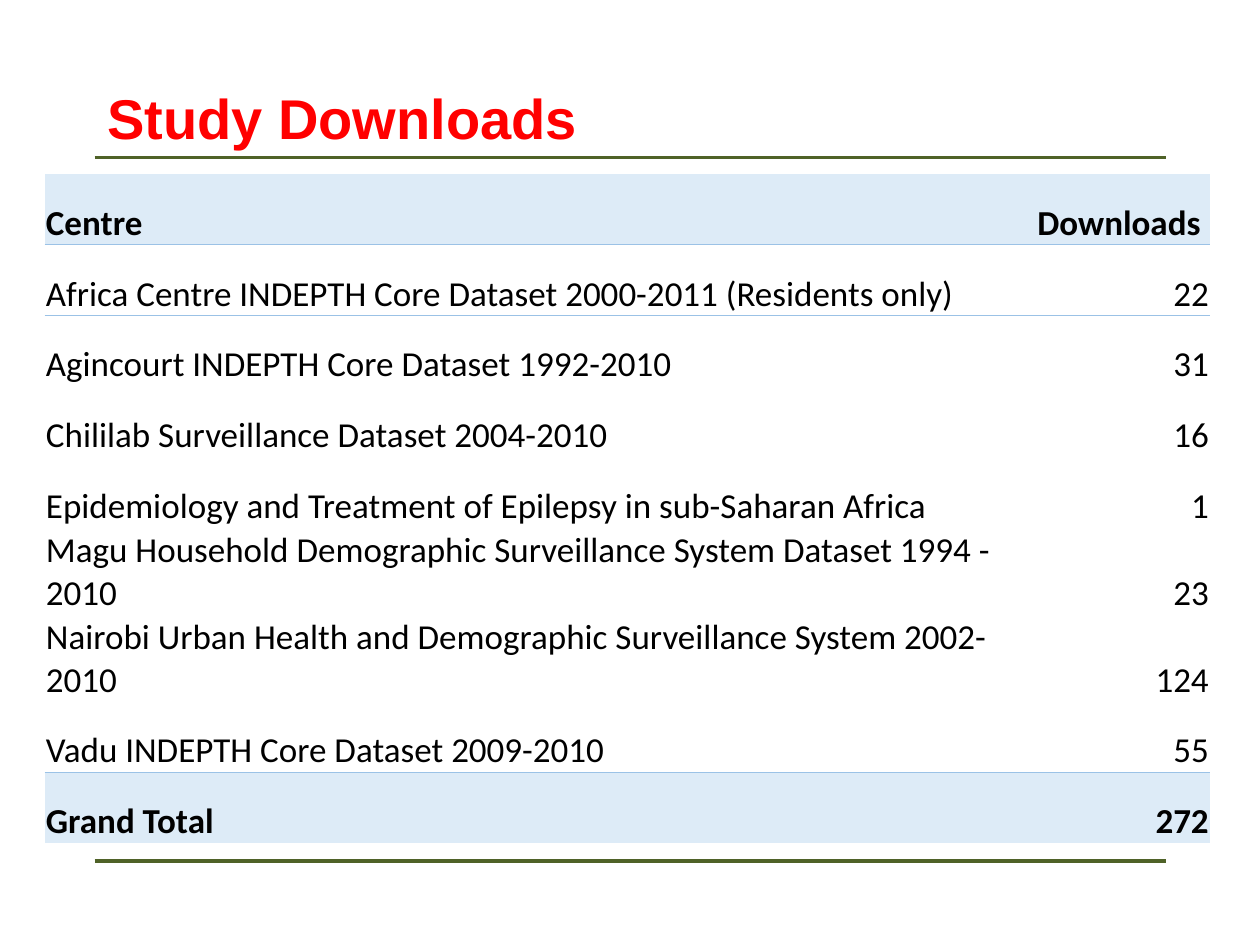
import pptx
import pptx.dml.color
import pptx.enum.dml
import pptx.enum.shapes
import pptx.enum.text
import pptx.oxml
import pptx.oxml.ns
import pptx.util

Pt = pptx.util.Pt
RGBColor = pptx.dml.color.RGBColor
ALIGN = pptx.enum.text.PP_ALIGN
ANCHOR = pptx.enum.text.MSO_ANCHOR

TITLE_RED = RGBColor(0xFF, 0x00, 0x00)
RULE_GREEN = RGBColor(0x4F, 0x62, 0x28)
BAND_BLUE = RGBColor(0xDD, 0xEB, 0xF7)
BORDER_BLUE = RGBColor(0x9B, 0xC2, 0xE6)
BLACK = RGBColor(0x00, 0x00, 0x00)
NO_STYLE = "{2D5ABB26-0587-4C30-8999-92F81FD0307C}"

DOWNLOADS = [
    ("Centre", "Downloads"),
    ("Africa Centre INDEPTH Core Dataset 2000-2011 (Residents only)", "22"),
    ("Agincourt INDEPTH Core Dataset 1992-2010", "31"),
    ("Chililab Surveillance Dataset 2004-2010", "16"),
    ("Epidemiology and Treatment of Epilepsy in sub-Saharan Africa", "1"),
    ("Magu Household Demographic Surveillance System Dataset 1994 - 2010", "23"),
    ("Nairobi Urban Health and Demographic Surveillance System 2002-2010", "124"),
    ("Vadu INDEPTH Core Dataset 2009-2010", "55"),
    ("Grand Total", "272"),
]


def add_rule(slide, left, top, width):
    """Draw a green horizontal rule."""
    rule = slide.shapes.add_connector(
        pptx.enum.shapes.MSO_CONNECTOR.STRAIGHT, left, top, left + width, top)
    rule.line.color.rgb = RULE_GREEN
    rule.line.width = Pt(2.25)
    pptx.oxml.ns.qn("a:effectLst")
    rule._element.spPr.append(pptx.oxml.parse_xml(
        f"<a:effectLst {pptx.oxml.ns.nsdecls('a')}/>"))


def place_title(slide, left, top, width, height):
    """Place the heading in the title placeholder."""
    heading = slide.shapes.title
    heading.left, heading.top, heading.width, heading.height = left, top, width, height
    frame = heading.text_frame
    frame.text = "Study Downloads"
    frame.vertical_anchor = ANCHOR.BOTTOM
    frame.auto_size = pptx.enum.text.MSO_AUTO_SIZE.NONE
    paragraph = frame.paragraphs[0]
    paragraph.alignment = ALIGN.LEFT
    font = paragraph.runs[0].font
    font.name, font.size, font.bold = "Arial", Pt(32), True
    font.color.rgb = TITLE_RED


def add_border(cell, side):
    """Give one side of a cell a thin blue border."""
    cell._tc.get_or_add_tcPr().insert(0, pptx.oxml.parse_xml(
        f'<a:{side} {pptx.oxml.ns.nsdecls("a")} w="{Pt(0.5)}"><a:solidFill>'
        f'<a:srgbClr val="{BORDER_BLUE}"/></a:solidFill></a:{side}>'))


def format_cell(cell, text, alignment, banded):
    """Write a cell, bold on blue if it is banded."""
    cell.margin_left = cell.margin_right = cell.margin_top = Pt(0.75)
    cell.margin_bottom = 0
    cell.vertical_anchor = ANCHOR.BOTTOM
    if banded:
        cell.fill.solid()
        cell.fill.fore_color.rgb = BAND_BLUE
    else:
        cell.fill.background()
    cell.text_frame.text = text
    paragraph = cell.text_frame.paragraphs[0]
    paragraph.alignment = alignment
    font = paragraph.runs[0].font
    font.name, font.size, font.bold = "Calibri", Pt(20), banded
    font.color.rgb = BLACK


def place_downloads(slide, left, top, width, row_height):
    """Place the table of downloads by centre."""
    last = len(DOWNLOADS) - 1
    table = slide.shapes.add_table(
        len(DOWNLOADS), 2, left, top, width, row_height * len(DOWNLOADS)).table
    table.first_row = table.horz_banding = False
    table._tbl.tblPr.find(pptx.oxml.ns.qn("a:tableStyleId")).text = NO_STYLE
    table.columns[1].width = Pt(99.5)
    table.columns[0].width = width - table.columns[1].width
    borders = {0: "lnB", 1: "lnT", last - 1: "lnB", last: "lnT"}
    for row, texts in enumerate(DOWNLOADS):
        table.rows[row].height = row_height
        for column, text in enumerate(texts):
            cell = table.cell(row, column)
            alignment = ALIGN.RIGHT if row and column else ALIGN.LEFT
            format_cell(cell, text, alignment, row in (0, last))
            if row in borders:
                add_border(cell, borders[row])


def main():
    """Build and save the slide."""
    deck = pptx.Presentation()
    deck.slide_width, deck.slide_height = Pt(720), Pt(540)
    slide = deck.slides.add_slide(deck.slide_layouts[5])
    for top in (Pt(492), Pt(90)):
        add_rule(slide, Pt(54), top, Pt(612))
    place_title(slide, Pt(54), Pt(24), Pt(612), Pt(66))
    place_downloads(slide, Pt(25.5), Pt(99.5), Pt(666), Pt(40.4))
    deck.save("out.pptx")


if __name__ == "__main__":
    main()
